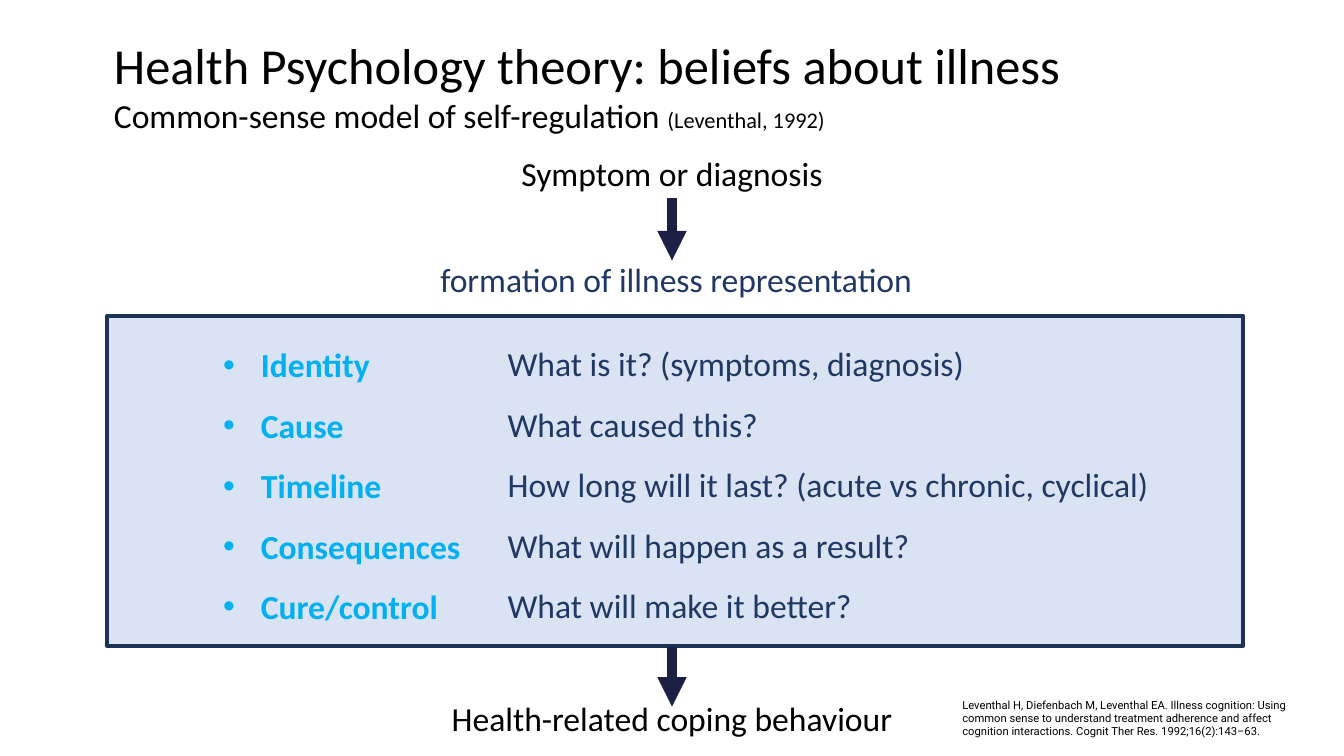
from lxml import etree
from pptx import Presentation
from pptx.dml.color import RGBColor
from pptx.enum.shapes import MSO_CONNECTOR, MSO_SHAPE
from pptx.enum.text import PP_ALIGN
from pptx.oxml.ns import qn
from pptx.util import Pt

STRAIGHT = MSO_CONNECTOR.STRAIGHT
RECTANGLE = MSO_SHAPE.RECTANGLE
LEFT, CENTER = PP_ALIGN.LEFT, PP_ALIGN.CENTER

BLACK = RGBColor(0x00, 0x00, 0x00)
NAVY = RGBColor(0x20, 0x38, 0x64)
ARROW_NAVY = RGBColor(0x1C, 0x20, 0x44)
BORDER_NAVY = RGBColor(0x1E, 0x32, 0x56)
PALE_BLUE = RGBColor(0xDA, 0xE3, 0xF3)
BRIGHT_BLUE = RGBColor(0x00, 0xB0, 0xF0)

PX = 9525  # EMU per px, 96 px to the inch
COLUMN_LEFT, COLUMN_WIDTH = 99, 1082
ARROW_X = COLUMN_LEFT + COLUMN_WIDTH // 2

BELIEFS = [
    ("Identity", "What is it? (symptoms, diagnosis)"),
    ("Cause", "What caused this?"),
    ("Timeline", "How long will it last? (acute vs chronic, cyclical)"),
    ("Consequences", "What will happen as a result?"),
    ("Cure/control", "What will make it better?"),
]

presentation = Presentation()
presentation.slide_width = 1280 * PX
presentation.slide_height = 720 * PX
slide = presentation.slides.add_slide(presentation.slide_layouts[6])


def add_text(box, lines, size, color, align=LEFT, font_name="Calibri"):
    """Add a wrapped text box; box is left, top, width, height in px."""
    shape = slide.shapes.add_textbox(*(length * PX for length in box))
    shape.text_frame.word_wrap = True
    shape.text_frame.text = "\n".join(lines)
    for paragraph in shape.text_frame.paragraphs:
        paragraph.alignment = align
        for run in paragraph.runs:
            run.font.name = font_name
            run.font.size = Pt(size)
            run.font.color.rgb = color
    return shape


# Title, subtitle and short citation
title = add_text(
    (99, 28, 1085, 132),
    ["Health Psychology theory: beliefs about illness",
     "Common-sense model of self-regulation "],
    36, BLACK)
subtitle = title.text_frame.paragraphs[1]
subtitle.runs[0].font.size = Pt(24)
citation = subtitle.add_run()
citation.text = "(Leventhal, 1992)"
citation.font.name = "Calibri"
citation.font.size = Pt(16)
citation.font.color.rgb = BLACK

# Panel behind the five beliefs
panel = slide.shapes.add_shape(RECTANGLE, 102 * PX, 301 * PX, 1082 * PX, 314 * PX)
panel.shadow.inherit = False
panel.fill.solid()
panel.fill.fore_color.rgb = PALE_BLUE
panel.line.color.rgb = BORDER_NAVY
panel.line.width = Pt(3)

# Bulleted beliefs and their questions
names, questions = zip(*BELIEFS)
belief_list = add_text((203, 304, 456, 295), names, 24, BRIGHT_BLUE)
question_list = add_text((474, 303, 639, 295), questions, 24, NAVY)
for paragraph in belief_list.text_frame.paragraphs:
    properties = paragraph._p.get_or_add_pPr()
    properties.set("marL", str(36 * PX))
    properties.set("indent", str(-36 * PX))
    etree.SubElement(properties, qn("a:buFont")).set("typeface", "Arial")
    etree.SubElement(properties, qn("a:buChar")).set("char", "•")
    paragraph.line_spacing = 1.5
    paragraph.runs[0].font.bold = True
for paragraph in question_list.text_frame.paragraphs:
    paragraph.line_spacing = 1.5

# Steps of the model
symptom = add_text((COLUMN_LEFT, 141, COLUMN_WIDTH, 48),
                   ["Symptom or diagnosis"], 24, BLACK, CENTER)
add_text((COLUMN_LEFT + 4, 242, COLUMN_WIDTH, 48),
         ["formation of illness representation"], 24, NAVY, CENTER)
add_text((COLUMN_LEFT, 660, COLUMN_WIDTH, 48),
         ["Health-related coping behaviour"], 24, BLACK, CENTER)

# Arrows between the steps
for top, bottom, source in [(189, 248, symptom), (616, 673, None)]:
    arrow = slide.shapes.add_connector(
        STRAIGHT, ARROW_X * PX, top * PX, ARROW_X * PX, bottom * PX)
    if source is not None:
        arrow.begin_connect(source, 2)
    arrow.line.color.rgb = ARROW_NAVY
    arrow.line.width = Pt(7)
    etree.SubElement(arrow.line._get_or_add_ln(), qn("a:tailEnd")).set("type", "triangle")
    etree.SubElement(arrow._element.spPr, qn("a:effectLst"))

# Full reference
add_text(
    (907, 660, 355, 48),
    ["Leventhal H, Diefenbach M, Leventhal EA. Illness cognition: Using common sense "
     "to understand treatment adherence and affect cognition interactions. "
     "Cognit Ther Res. 1992;16(2):143–63."],
    8, BLACK, font_name="Roboto")

presentation.save("out.pptx")
